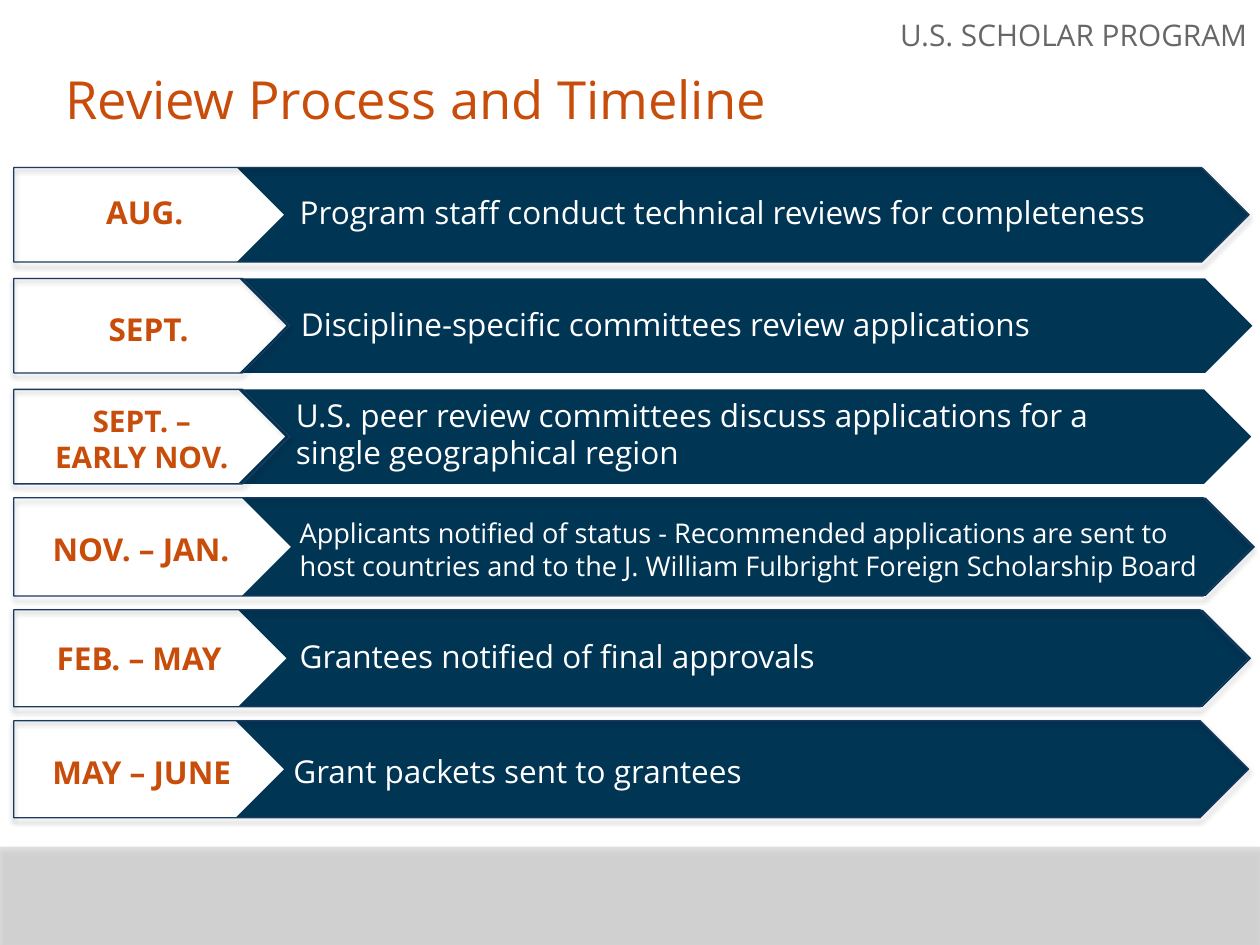
from lxml.etree import SubElement
from pptx import Presentation
from pptx.dml.color import RGBColor
from pptx.enum.shapes import MSO_SHAPE as Shape
from pptx.enum.text import PP_ALIGN as Align
from pptx.oxml.ns import qn
from pptx.util import Inches, Pt

COLORS = {"orange": "C84D0A", "navy": "003554", "outline": "1B3A60",
          "gray": "676767", "white": "FFFFFF", "black": "000000"}


def color(name):
    return RGBColor.from_string(COLORS[name])


def write(frame, text, size=18, ink="white", bold=False, align=Align.LEFT,
          wrap=True):
    """Fill a text frame, one paragraph per line of text."""
    frame.word_wrap = wrap
    for index, line in enumerate(text.split("\n")):
        paragraph = frame.add_paragraph() if index else frame.paragraphs[0]
        paragraph.alignment = align
        run = paragraph.add_run()
        run.text = line
        run.font.name = "Open Sans"
        run.font.size = Pt(size)
        run.font.bold = bold
        run.font.color.rgb = color(ink)


class TimelineSlide:
    def __init__(self, deck):
        self.slide = deck.slides.add_slide(deck.slide_layouts[6])

    def text(self, box, text, **style):
        label = self.slide.shapes.add_textbox(*map(Inches, box))
        write(label.text_frame, text, **style)

    def shape(self, kind, box, fill=None, opacity=100, line=None, shadow=None):
        form = self.slide.shapes.add_shape(kind, *map(Inches, box))
        form.shadow.inherit = False
        if fill:
            form.fill.solid()
            form.fill.fore_color.rgb = color(fill)
            if opacity < 100:
                tint = form.fill._xPr.find(".//" + qn("a:srgbClr"))
                SubElement(tint, qn("a:alpha"), val=str(opacity * 1000))
        else:
            form.fill.background()
        if line:
            form.line.color.rgb = color(line)
            form.line.width = Pt(0.75)
        else:
            form.line.fill.background()
        if shadow:
            self.drop_shadow(form, *shadow)

    def drop_shadow(self, form, opacity, blur, distance):
        """Cast a soft black shadow straight down."""
        effects = form._element.spPr.find(qn("a:effectLst"))
        outer = SubElement(effects, qn("a:outerShdw"), blurRad=str(Pt(blur)),
                           dist=str(Pt(distance)), dir="5400000",
                           rotWithShape="0")
        tint = SubElement(outer, qn("a:srgbClr"), val=COLORS["black"])
        SubElement(tint, qn("a:alpha"), val=str(opacity * 1000))

    def step(self, top, height, month, month_box, task, task_box, bar_left,
             plate_width, month_size=18, task_size=18, wrap=True):
        self.text(month_box, month, size=month_size, ink="orange", bold=True,
                  align=Align.CENTER)
        self.shape(Shape.CHEVRON, (bar_left, top, 8.04, height), fill="navy")
        self.text(task_box, task, size=task_size, wrap=wrap)
        self.shape(Shape.PENTAGON, (0.11, top, plate_width, height),
                   line="outline", shadow=(35, 3.1, 1.8))


STEPS = [
    dict(top=1.33, height=0.75, bar_left=1.88, plate_width=9.8,
         month="AUG.", month_box=(0.65, 1.48, 1, 0.4),
         task="Program staff conduct technical reviews for completeness",
         task_box=(2.28, 1.48, 7.08, 0.4)),
    dict(top=2.21, height=0.75, bar_left=1.9, plate_width=2.19,
         month="SEPT.", month_box=(0.68, 2.41, 1, 0.4),
         task="Discipline-specific committees review applications",
         task_box=(2.29, 2.37, 7.08, 0.4)),
    dict(top=3.09, height=0.75, bar_left=1.89, plate_width=2.19,
         month="SEPT. –\nEARLY NOV.", month_box=(0.25, 3.15, 1.75, 0.67),
         month_size=17,
         task="U.S. peer review committees discuss applications for a "
              "single geographical region",
         task_box=(2.25, 3.09, 7.08, 0.71)),
    dict(top=3.95, height=0.78, bar_left=1.92, plate_width=9.83,
         month="NOV. – JAN.", month_box=(0.21, 4.16, 1.82, 0.4),
         task="Applicants notified of status - Recommended applications are "
              "sent to host countries and to the J. William Fulbright "
              "Foreign Scholarship Board",
         task_box=(2.28, 4.05, 7.39, 0.62), task_size=15.5),
    dict(top=4.84, height=0.77, bar_left=1.89, plate_width=9.8,
         month="FEB. – MAY", month_box=(-0.02, 5.02, 2.25, 0.4),
         task="Grantees notified of final approvals",
         task_box=(2.28, 5.01, 7.08, 0.4)),
    dict(top=5.72, height=0.77, bar_left=1.87, plate_width=9.8,
         month="MAY – JUNE", month_box=(0.04, 5.93, 2.17, 0.4),
         task="Grant packets sent to grantees",
         task_box=(2.23, 5.92, 3.8, 0.4), wrap=False),
]


def main():
    deck = Presentation()
    deck.slide_width, deck.slide_height = Inches(10), Inches(7.5)
    timeline = TimelineSlide(deck)

    # Footer band
    timeline.shape(Shape.RECTANGLE, (0, 6.72, 10, 0.78), fill="gray",
                   opacity=20, shadow=(38, 3.1, 1.6))

    # Title and program name
    timeline.text((0.42, 0.48, 8.67, 0.52), "Review Process and Timeline",
                  size=30, ink="orange")
    timeline.text((7, 0.08, 3, 0.42), "U.S. SCHOLAR PROGRAM", size=17,
                  ink="gray", align=Align.RIGHT)

    # Timeline steps
    for step in STEPS:
        timeline.step(**step)

    deck.save("out.pptx")


if __name__ == "__main__":
    main()
